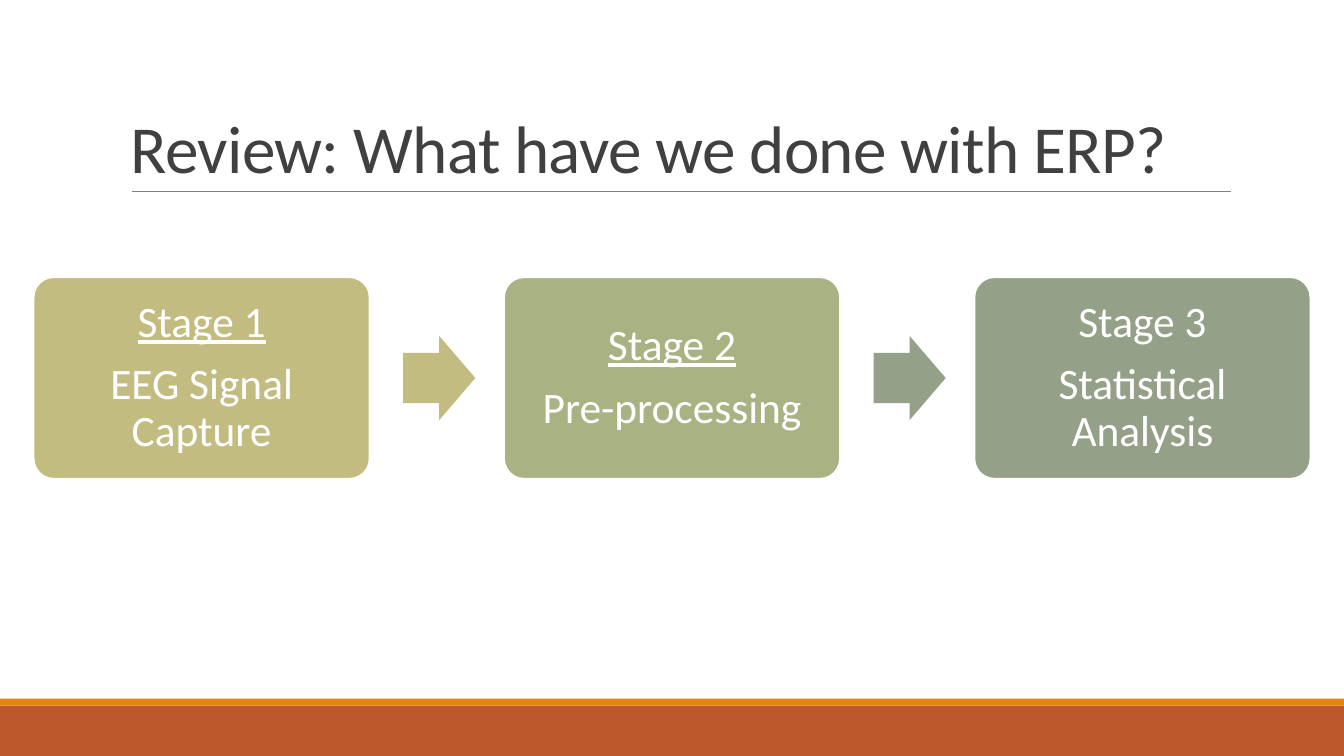
from pptx import Presentation
from pptx.dml.color import RGBColor
from pptx.enum.shapes import MSO_CONNECTOR, MSO_SHAPE
from pptx.enum.text import MSO_ANCHOR, PP_ALIGN, MSO_AUTO_SIZE
from pptx.oxml.ns import qn
from pptx.util import Pt
from lxml import etree

RECT = MSO_SHAPE.RECTANGLE
ROUND = MSO_SHAPE.ROUNDED_RECTANGLE
ARROW = MSO_SHAPE.RIGHT_ARROW
STRAIGHT = MSO_CONNECTOR.STRAIGHT
MIDDLE, BOTTOM = MSO_ANCHOR.MIDDLE, MSO_ANCHOR.BOTTOM
CENTER = PP_ALIGN.CENTER

WHITE = RGBColor(0xFF, 0xFF, 0xFF)
DARK = RGBColor(0x40, 0x40, 0x40)
GRAY = RGBColor(0x80, 0x80, 0x80)
RUST = RGBColor(0xBD, 0x58, 0x2C)
ORANGE = RGBColor(0xE4, 0x83, 0x12)
SAND = RGBColor(0xC2, 0xBC, 0x80)
MOSS = RGBColor(0xA8, 0xB2, 0x83)
SAGE = RGBColor(0x94, 0xA0, 0x88)

FONT = "Calibri"
TITLE = "Review: What have we done with ERP?"
# heading, step, heading underlined, box colour
STAGES = [
    ("Stage 1", "EEG Signal Capture", True, SAND),
    ("Stage 2", "Pre-processing", True, MOSS),
    ("Stage 3", "Statistical Analysis", False, SAGE),
]
ARROWS = [SAND, SAGE]

WIDE, HIGH = 960, 540
BANDS = [(504, 36, RUST), (499, 5, ORANGE)]
LEFT, MID, PITCH = 24, 270, 336
BOX_W, BOX_H = 240, 144
TIP_W, TIP_H, TIP_GAP = 51.5, 60, 24


def add_block(kind, x, y, w, h, fill):
    block = slide.shapes.add_shape(kind, Pt(x), Pt(y), Pt(w), Pt(h))
    block.shadow.inherit = False
    block.fill.solid()
    block.fill.fore_color.rgb = fill
    block.line.fill.background()
    return block


def add_run(para, text, size, color):
    run = para.add_run()
    run.text = text
    run.font.name = FONT
    run.font.size = Pt(size)
    run.font.color.rgb = color
    return run


def add_title():
    box = slide.shapes.add_textbox(Pt(86.4), Pt(22.5), Pt(792), Pt(114.5))
    frame = box.text_frame
    frame.auto_size = MSO_AUTO_SIZE.NONE
    frame.word_wrap = True
    frame.vertical_anchor = BOTTOM
    para = frame.paragraphs[0]
    para.line_spacing = 0.85
    run = add_run(para, TITLE, 48, DARK)
    run._r.get_or_add_rPr().set("spc", "-50")


def add_rule():
    rule = slide.shapes.add_connector(STRAIGHT, Pt(94), Pt(136.8), Pt(879), Pt(136.8))
    rule.line.color.rgb = GRAY
    rule.line.width = Pt(0.5)
    etree.SubElement(rule._element.spPr, qn("a:effectLst"))


def add_stage(x, head, step, under, fill):
    box = add_block(ROUND, x, MID - BOX_H / 2, BOX_W, BOX_H, fill)
    box.adjustments[0] = 0.1
    box.line.color.rgb = WHITE
    box.line.width = Pt(1.25)
    frame = box.text_frame
    frame.word_wrap = True
    frame.vertical_anchor = MIDDLE
    frame.margin_left = frame.margin_right = Pt(9.3)
    frame.margin_top = frame.margin_bottom = Pt(9.3)
    for para, text, line in (
        (frame.paragraphs[0], head, under),
        (frame.add_paragraph(), step, False),
    ):
        para.alignment = CENTER
        para.line_spacing = 0.9
        para.space_after = Pt(10.85)
        add_run(para, text, 31, WHITE).font.underline = line


deck = Presentation()
deck.slide_width, deck.slide_height = Pt(WIDE), Pt(HIGH)
slide = deck.slides.add_slide(deck.slide_layouts[6])

for top, height, fill in BANDS:
    add_block(RECT, 0, top, WIDE, height, fill)
add_rule()
add_title()
for i, stage in enumerate(STAGES):
    add_stage(LEFT + i * PITCH, *stage)
for i, fill in enumerate(ARROWS):
    x = LEFT + i * PITCH + BOX_W + TIP_GAP
    tip = add_block(ARROW, x, MID - TIP_H / 2, TIP_W, TIP_H, fill)
    tip.adjustments[0] = 0.6
    tip.adjustments[1] = 0.5

deck.save("out.pptx")
